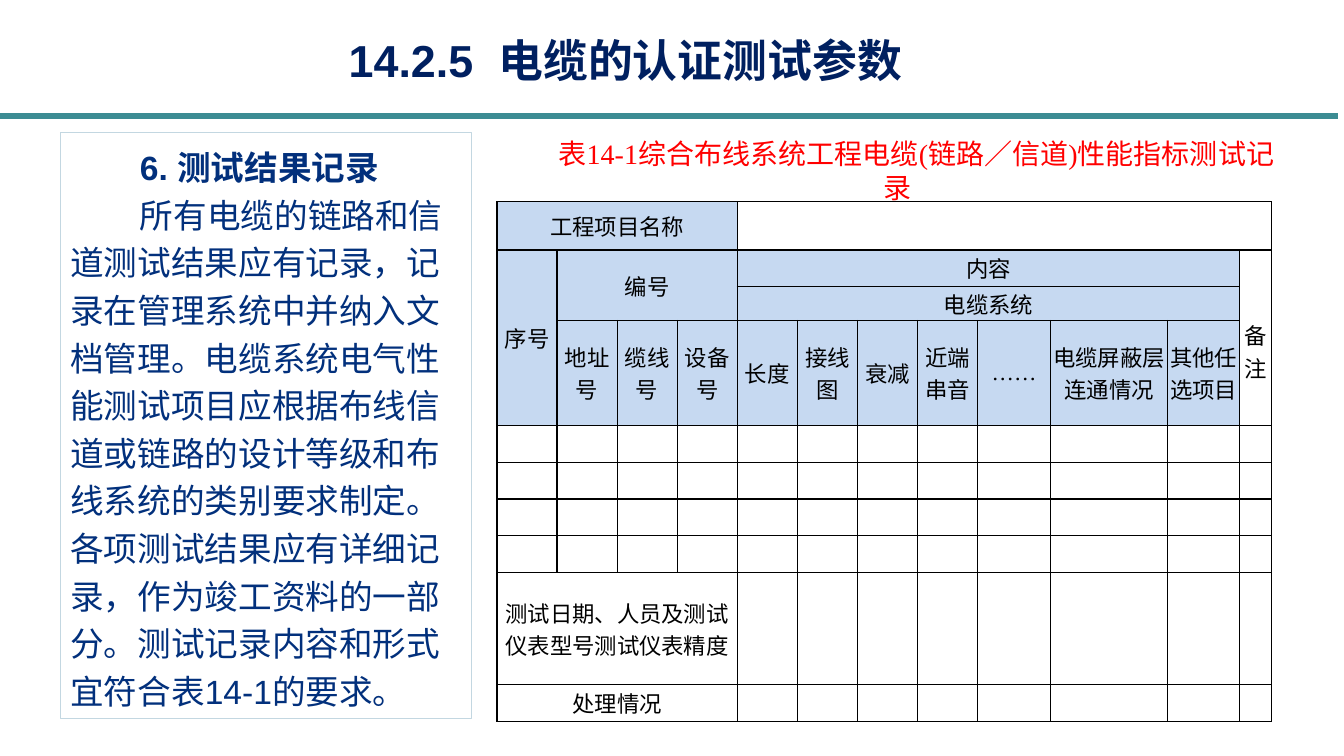
from lxml import etree
from pptx import Presentation
from pptx import util as u
from pptx.dml.color import RGBColor
from pptx.enum import shapes, text
from pptx.oxml import ns

COLORS = {
    "title": "002060", "body": "02307C", "caption": "FF0000", "rule": "3C8C93",
    "panel": "FFFFFF", "panel_line": "C3D7E1", "header": "C6D9F1", "black": "000000",
}
SANS, SERIF = "Arial", "Times New Roman"
WIDTH, HEIGHT = u.Inches(13.33), u.Inches(7.5)

# Table grid, in hundredths of the slide's width and height
COLUMNS = [4.47] * 8 + [5.44, 8.71, 5.36, 2.38]
ROWS = [6.4, 4.8, 4.53, 13.87] + [4.87] * 4 + [14.8, 4.87]

# (row, column, row span, column span, lines, shaded)
LABELS = [
    (0, 0, 1, 4, ["工程项目名称"], True),
    (0, 4, 1, 8, [], False),
    (1, 0, 3, 1, ["序号"], True),
    (1, 1, 2, 3, ["编号"], True),
    (1, 4, 1, 7, ["内容"], True),
    (2, 4, 1, 7, ["电缆系统"], True),
    (1, 11, 3, 1, ["备注"], False),
    (8, 0, 1, 4, ["测试日期、人员及测试仪表型号测试仪表精度"], False),
    (9, 0, 1, 4, ["处理情况"], False),
]
FIELDS = [["地址号"], ["缆线号"], ["设备号"], ["长度"], ["接线图"], ["衰减"],
          ["近端", "串音"], ["……"], ["电缆屏蔽层", "连通情况"], ["其他任", "选项目"]]
LABELS += [(3, column, 1, 1, lines, True) for column, lines in enumerate(FIELDS, 1)]

BODY = ("所有电缆的链路和信道测试结果应有记录，记录在管理系统中并纳入文档管理。"
        "电缆系统电气性能测试项目应根据布线信道或链路的设计等级和布线系统的类别要求制定。"
        "各项测试结果应有详细记录，作为竣工资料的一部分。"
        "测试记录内容和形式宜符合表14-1的要求。")


def across(share):
    return round(WIDTH * share / 100)


def down(share):
    return round(HEIGHT * share / 100)


def area(left, top, width, height):
    return across(left), down(top), across(width), down(height)


def color(name):
    return RGBColor.from_string(COLORS[name])


def write(para, words, size, font, tint, bold=False, indent=0):
    span = para.add_run()
    span.text = words
    span.font.size = u.Pt(size)
    span.font.name = font
    span.font.bold = bold
    span.font.color.rgb = color(tint)
    if indent:
        para._p.get_or_add_pPr().set("indent", str(u.Inches(indent)))


def add_rule(page):
    rule = page.shapes.add_connector(
        shapes.MSO_CONNECTOR.STRAIGHT, 0, down(15.33), across(99.55), down(15.33))
    rule.line.color.rgb = color("rule")
    rule.line.width = u.Pt(4.5)
    etree.SubElement(rule._element.spPr, ns.qn("a:effectLst"))


def add_text(page, place, anchor):
    box = page.shapes.add_textbox(*area(*place))
    box.text_frame.word_wrap = True
    box.text_frame.vertical_anchor = anchor
    return box.text_frame.paragraphs[0]


def add_panel(page):
    panel = page.shapes.add_shape(
        shapes.MSO_SHAPE.RECTANGLE, *area(4.5, 17.47, 30.61, 77.6))
    panel.shadow.inherit = False
    panel.fill.solid()
    panel.fill.fore_color.rgb = color("panel")
    panel.line.color.rgb = color("panel_line")
    panel.line.width = u.Pt(0.75)
    frame = panel.text_frame
    frame.word_wrap = True
    frame.vertical_anchor = text.MSO_ANCHOR.MIDDLE
    heading, body = frame.paragraphs[0], frame.add_paragraph()
    for para, words, bold in ((heading, "6. 测试结果记录", True), (body, BODY, False)):
        para.alignment = text.PP_ALIGN.LEFT
        para.line_spacing = u.Pt(34)
        write(para, words, 24, SANS, "body", bold, indent=0.69)


def style_cell(cell):
    cell.margin_left = cell.margin_right = cell.margin_top = cell.margin_bottom = 0
    cell.vertical_anchor = text.MSO_ANCHOR.MIDDLE
    properties = cell._tc.get_or_add_tcPr()
    for side in ("a:lnL", "a:lnR", "a:lnT", "a:lnB"):
        border = etree.SubElement(properties, ns.qn(side), w=str(u.Pt(1)))
        fill = etree.SubElement(border, ns.qn("a:solidFill"))
        etree.SubElement(fill, ns.qn("a:srgbClr"), val=COLORS["black"])
    cell.fill.background()


def fill_label(table, row, column, row_span, column_span, lines, shaded):
    cell = table.cell(row, column)
    if row_span * column_span > 1:
        cell.merge(table.cell(row + row_span - 1, column + column_span - 1))
    if shaded:
        cell.fill.solid()
        cell.fill.fore_color.rgb = color("header")
    for number, words in enumerate(lines):
        frame = cell.text_frame
        para = frame.add_paragraph() if number else frame.paragraphs[0]
        para.alignment = text.PP_ALIGN.CENTER
        write(para, words, 16, SERIF, "black")


def add_record_table(page):
    place = area(36.98, 26.67, sum(COLUMNS), sum(ROWS))
    table = page.shapes.add_table(len(ROWS), len(COLUMNS), *place).table
    table.first_row = table.horz_banding = False
    for column, share in zip(table.columns, COLUMNS):
        column.width = across(share)
    for row, share in zip(table.rows, ROWS):
        row.height = down(share)
    for cell in table.iter_cells():
        style_cell(cell)
    for label in LABELS:
        fill_label(table, *label)
    # The remarks heading sits a little below the middle
    table.cell(1, 11).margin_top = u.Inches(0.27)


def main():
    deck = Presentation()
    deck.slide_width, deck.slide_height = WIDTH, HEIGHT
    page = deck.slides.add_slide(deck.slide_layouts[6])

    # Title band
    add_rule(page)
    title = add_text(page, (25.21, 3.73, 47.64, 8.4), text.MSO_ANCHOR.TOP)
    write(title, "14.2.5  电缆的认证测试参数", 32, SANS, "title", bold=True)

    # Explanation on the left
    add_panel(page)

    # Test record on the right
    add_record_table(page)
    caption = add_text(page, (36.98, 19.6, 59.56, 5.87), text.MSO_ANCHOR.MIDDLE)
    caption.alignment = text.PP_ALIGN.CENTER
    write(caption, "表14-1综合布线系统工程电缆(链路／信道)性能指标测试记录",
          20, SERIF, "caption", indent=0.38)

    deck.save("out.pptx")


if __name__ == "__main__":
    main()
